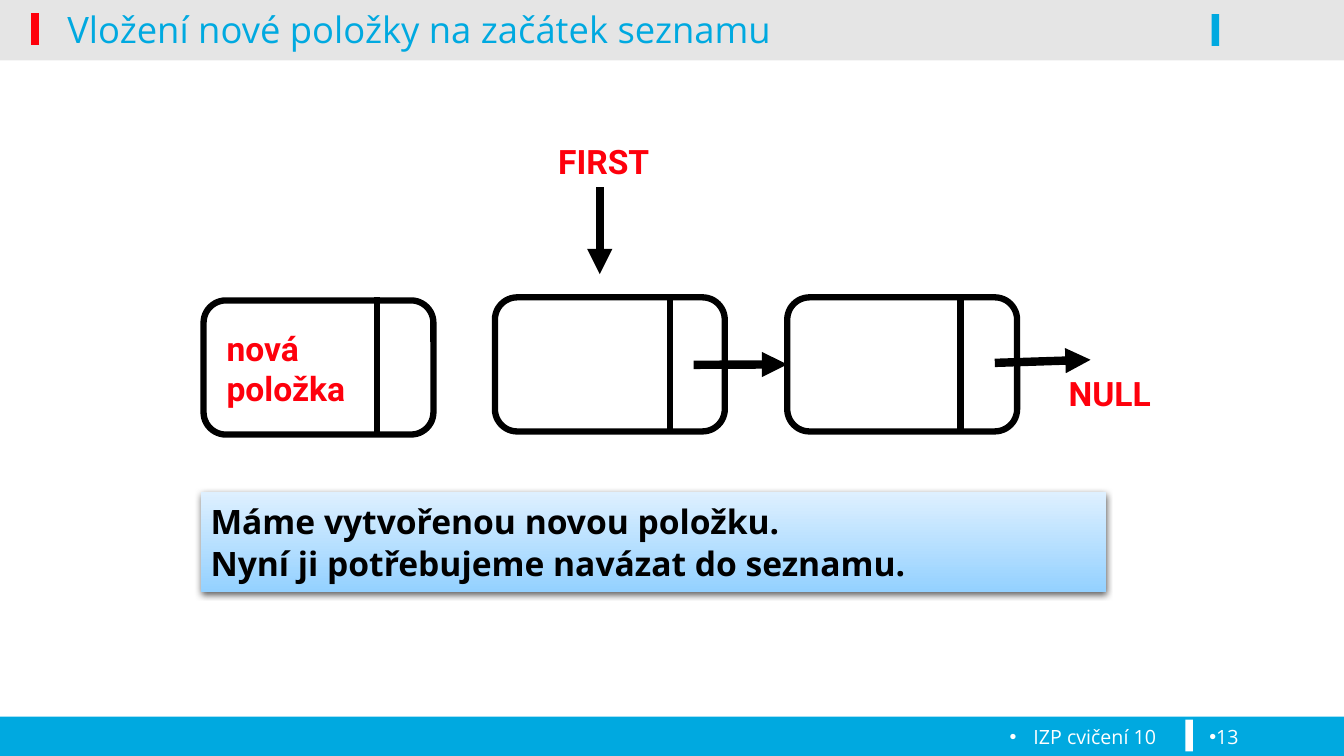
from lxml import etree
from pptx import Presentation
from pptx.dml.color import RGBColor
from pptx.enum.shapes import MSO_CONNECTOR, MSO_SHAPE
from pptx.enum.text import MSO_ANCHOR, PP_ALIGN
from pptx.oxml import parse_xml
from pptx.oxml.ns import nsdecls, qn
from pptx.util import Pt

RECT, ROUND = MSO_SHAPE.RECTANGLE, MSO_SHAPE.ROUNDED_RECTANGLE
STRAIGHT = MSO_CONNECTOR.STRAIGHT
TOP, MIDDLE = MSO_ANCHOR.TOP, MSO_ANCHOR.MIDDLE
LEFT, CENTER, RIGHT = PP_ALIGN.LEFT, PP_ALIGN.CENTER, PP_ALIGN.RIGHT
LEFT_SIDE = 1

COLORS = {"blue": "00A9E0", "red": "FE000C", "white": "FFFFFF", "black": "000000",
          "note_bottom": "94D1FF", "note_top": "DEF0FF"}

TITLE = {"name": "Open Sans", "size": Pt(26), "color": "blue"}
FOOTER = {"name": "Open Sans", "size": Pt(14), "color": "white"}
LABEL = {"name": "Roboto", "size": Pt(24), "bold": True, "color": "red"}
NOTE = {"name": "Open Sans", "size": Pt(24), "bold": True, "color": "black"}

NODE_W, NODE_H = 164.2, 95.8
# left, top, divider x, divider top
NODES = [(145.4, 214.6, 269.3, 212.4),
         (353.5, 212.4, 478.8, 213.8),
         (562.3, 212.4, 686.2, 212.4)]


def rgb(name):
    return RGBColor.from_string(COLORS[name])


def add_box(slide, kind, x, y, w, h, fill=None, line=None, alpha=None):
    s = slide.shapes.add_shape(kind, Pt(x), Pt(y), Pt(w), Pt(h))
    s.shadow.inherit = False
    if fill:
        s.fill.solid()
        s.fill.fore_color.rgb = rgb(fill)
    if alpha:
        color = s._element.spPr.find(qn("a:solidFill"))[0]
        etree.SubElement(color, qn("a:alpha"), val=str(alpha * 1000))
    if line:
        s.line.color.rgb = rgb(line)
        s.line.width = Pt(4.5)
    else:
        s.line.fill.background()
    return s


def add_line(slide, x1, y1, x2, y2, width=4.5, arrow=False):
    c = slide.shapes.add_connector(STRAIGHT, Pt(x1), Pt(y1), Pt(x2), Pt(y2))
    c.line.color.rgb = rgb("black")
    c.line.width = Pt(width)
    if arrow:
        etree.SubElement(c.line._get_or_add_ln(), qn("a:tailEnd"), type="triangle")
    etree.SubElement(c._element.spPr, qn("a:effectLst"))
    return c


def write(s, lines, fmt, align=LEFT, anchor=TOP, bullet_indent=None):
    tf = s.text_frame
    tf.word_wrap = True
    tf.vertical_anchor = anchor
    for i, line in enumerate(lines):
        p = tf.add_paragraph() if i else tf.paragraphs[0]
        p.text = line
        p.alignment = align
        if i:
            p.space_before = Pt(1)
        if bullet_indent is not None:
            pPr = p._p.get_or_add_pPr()
            pPr.set("marL", str(Pt(bullet_indent)))
            pPr.set("indent", str(-Pt(bullet_indent)))
            etree.SubElement(pPr, qn("a:buFont"), typeface="Arial")
            etree.SubElement(pPr, qn("a:buChar"), char="•")
        for r in p.runs:
            for key, value in fmt.items():
                if key == "color":
                    r.font.color.rgb = rgb(value)
                else:
                    setattr(r.font, key, value)


def add_text(slide, x, y, w, h, text, fmt, **layout):
    s = slide.shapes.add_textbox(Pt(x), Pt(y), Pt(w), Pt(h))
    write(s, [text], fmt, **layout)


def add_node(slide, x, y, divider_x, divider_y):
    s = add_box(slide, ROUND, x, y, NODE_W, NODE_H, "white", "black")
    add_line(slide, divider_x, divider_y, divider_x, divider_y + 96.5)
    return s


def add_note(slide, x, y, w, h, lines):
    s = add_box(slide, RECT, x, y, w, h)
    s.fill.gradient()
    s.fill.gradient_angle = 90
    for stop, name in zip(s.fill.gradient_stops, ("note_bottom", "note_top")):
        stop.color.rgb = rgb(name)
    spPr = s._element.spPr
    spPr.replace(spPr.find(qn("a:effectLst")), parse_xml(
        f'<a:effectLst {nsdecls("a")}><a:outerShdw blurRad="{Pt(4.5)}" dist="{Pt(1.5)}" '
        f'dir="5400000" rotWithShape="0"><a:srgbClr val="{COLORS["black"]}">'
        '<a:alpha val="63000"/></a:srgbClr></a:outerShdw></a:effectLst>'))
    write(s, lines, NOTE, anchor=MIDDLE)


def main():
    prs = Presentation()
    prs.slide_width, prs.slide_height = Pt(960), Pt(540)
    slide = prs.slides.add_slide(prs.slide_layouts[6])

    # Header and footer bars with their markers
    add_box(slide, RECT, 0, 511.9, 960, 28.1, "blue")
    add_box(slide, RECT, 0, 40.3, 960, 2.9, "black", alpha=10)
    add_box(slide, RECT, 0, 0, 960, 40.3, "black", alpha=10)
    for x, y, color in [(22.3, 9.4, "red"), (846.7, 514.1, "white"), (865.4, 10.1, "blue")]:
        add_box(slide, RECT, x, y, 5.4, 22.7, color)
    add_text(slide, 41, -7.9, 712, 56.9, "Vložení nové položky na začátek seznamu",
             TITLE, anchor=MIDDLE)
    add_text(slide, 130.3, 514.1, 702.7, 25.2, "IZP cvičení 10", FOOTER,
             align=RIGHT, bullet_indent=17)
    add_text(slide, 856.8, 514.1, 64.8, 25.9, "13", FOOTER, bullet_indent=0)

    # Linked list
    nodes = [add_node(slide, *node) for node in NODES]
    add_line(slide, 428.4, 133.9, 428.4, 195.8, 6, arrow=True)
    link = add_line(slide, 495.4, 260.6, 562.3, 259.2, 6, arrow=True)
    link.end_connect(nodes[2], LEFT_SIDE)
    add_line(slide, 710.6, 259.2, 779, 257, 6, arrow=True)

    # Labels
    add_text(slide, 383, 97.2, 96.5, 36, "FIRST", LABEL, align=CENTER)
    add_text(slide, 753.1, 262.8, 79.2, 36, "NULL", LABEL, align=CENTER)
    add_text(slide, 154.8, 230.4, 112.3, 100, "nová\vpoložka", LABEL)

    # Explanation
    add_note(slide, 143.3, 351.4, 646.6, 71.3,
             ["Máme vytvořenou novou položku.", "Nyní ji potřebujeme navázat do seznamu."])

    prs.save("out.pptx")


if __name__ == "__main__":
    main()
